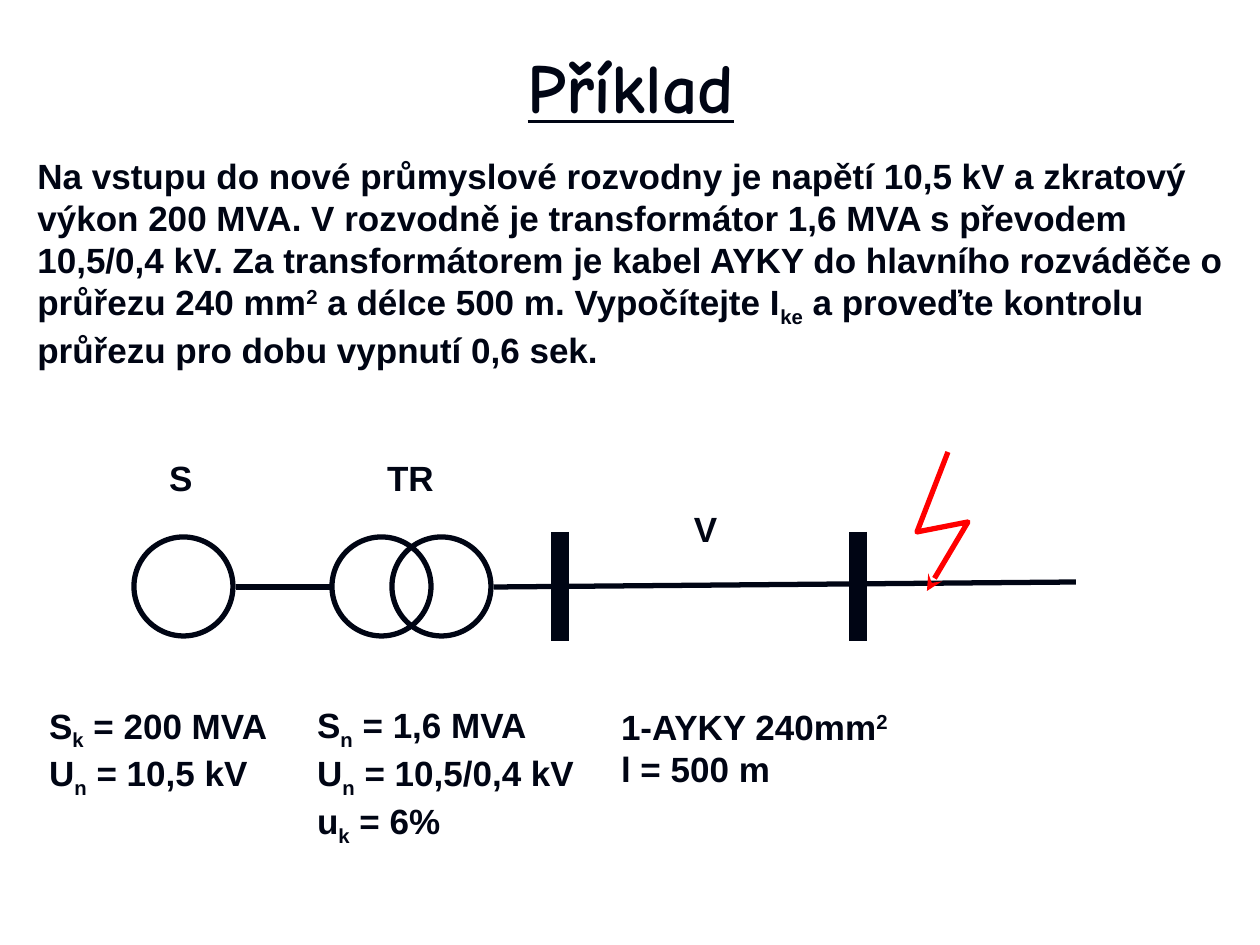
from dataclasses import dataclass

from lxml.etree import SubElement
from pptx import Presentation
from pptx.dml.color import RGBColor
from pptx.enum.shapes import MSO_CONNECTOR as Connector, MSO_SHAPE as Shape
from pptx.enum.text import MSO_ANCHOR as Anchor, MSO_AUTO_SIZE as AutoSize, PP_ALIGN as Align
from pptx.oxml.ns import qn
from pptx.util import Pt

SCALE = 914400 / 126


@dataclass(frozen=True)
class Theme:
    ink: RGBColor = RGBColor(0x00, 0x05, 0x14)
    fault: RGBColor = RGBColor(0xFF, 0x00, 0x00)
    body_font: str = "Arial"
    title_font: str = "Comic Neue"
    body_size: int = 20
    title_size: int = 40
    wire_width: int = 3
    busbar_width: int = 10


THEME = Theme()
SUPER, SUB = 30000, -25000

TITLE = "Příklad"
TASK = [[
    "Na vstupu do nové průmyslové rozvodny je napětí 10,5 kV a zkratový výkon 200 MVA. "
    "V rozvodně je transformátor 1,6 MVA s převodem 10,5/0,4 kV. Za transformátorem je "
    "kabel AYKY do hlavního rozváděče o průřezu 240 mm",
    ("2", SUPER),
    " a délce 500 m. Vypočítejte I",
    ("ke", SUB),
    " a proveďte kontrolu průřezu pro dobu vypnutí 0,6 sek.",
]]
SOURCE_DATA = [["S", ("k", SUB), " = 200 MVA"], ["U", ("n", SUB), " = 10,5 kV"]]
TRANSFORMER_DATA = [
    ["S", ("n", SUB), " = 1,6 MVA"],
    ["U", ("n", SUB), " = 10,5/0,4 kV"],
    ["u", ("k", SUB), " = 6%"],
]
CABLE_DATA = [["1-AYKY 240mm", ("2", SUPER)], ["l = 500 m"]]

NOTES = [
    (SOURCE_DATA, (44, 699, 248, 94), True),
    (CABLE_DATA, (616, 700, 281, 94), False),
    (TRANSFORMER_DATA, (312, 699, 271, 137), False),
    ([["TR"]], (382, 452, 57, 52), False),
    ([["V"]], (689, 503, 34, 52), False),
    ([["S"]], (164, 452, 34, 52), False),
]

CIRCLE_LEFTS, CIRCLE_TOP, CIRCLE_SIZE = (134, 392, 332), 537, 99
BUSBAR_CENTRES, BUSBAR_TOP, BUSBAR_BOTTOM = (858, 560), 532, 641
WIRES = [((236, 587), (330, 587)), ((494, 587), (1076, 582))]
LIGHTNING = [(948, 452), (917, 532), (968, 522), (927, 591)]


def px(*values):
    return [round(value * SCALE) for value in values]


def add_text(page, paragraphs, area, wrap=True, inset=5, font=THEME.body_font,
             size=THEME.body_size):
    box = page.shapes.add_textbox(*px(*area))
    frame = box.text_frame
    frame.word_wrap = wrap
    frame.auto_size = AutoSize.SHAPE_TO_FIT_TEXT
    if inset is not None:
        edge = px(inset)[0]
        frame.margin_left = frame.margin_right = edge
        frame.margin_top = frame.margin_bottom = edge
    for index, spans in enumerate(paragraphs):
        para = frame.add_paragraph() if index else frame.paragraphs[0]
        for item in spans:
            text, baseline = (item, 0) if isinstance(item, str) else item
            span = para.add_run()
            span.text = text
            span.font.name = font
            span.font.size = Pt(size)
            span.font.bold = True
            span.font.color.rgb = THEME.ink
            if baseline:
                span.font._element.set("baseline", str(baseline))
    return frame


def set_line(shape, color, width):
    shape.line.color.rgb = color
    shape.line.width = Pt(width)


def add_line(page, start, end, width):
    line = page.shapes.add_connector(Connector.STRAIGHT, *px(*start, *end))
    set_line(line, THEME.ink, width)
    SubElement(line._element.spPr, qn("a:effectLst"))


def add_circle(page, left):
    circle = page.shapes.add_shape(
        Shape.OVAL, *px(left, CIRCLE_TOP, CIRCLE_SIZE, CIRCLE_SIZE))
    circle.fill.background()
    circle.shadow.inherit = False
    set_line(circle, THEME.ink, THEME.wire_width)


def add_lightning(page):
    builder = page.shapes.build_freeform(*LIGHTNING[0], scale=SCALE)
    builder.add_line_segments(LIGHTNING[1:], close=False)
    bolt = builder.convert_to_shape()
    bolt.fill.background()
    bolt.shadow.inherit = False
    set_line(bolt, THEME.fault, THEME.wire_width)
    SubElement(bolt.line._get_or_add_ln(), qn("a:tailEnd"), type="stealth")


def main():
    deck = Presentation()
    deck.slide_width, deck.slide_height = px(1260, 945)
    page = deck.slides.add_slide(deck.slide_layouts[6])

    title = add_text(page, [[TITLE]], (64, 35, 1134, 100), inset=None,
                     font=THEME.title_font, size=THEME.title_size)
    title.auto_size = AutoSize.NONE
    title.vertical_anchor = Anchor.MIDDLE
    title.paragraphs[0].alignment = Align.CENTER
    title.paragraphs[0].runs[0].font.underline = True

    add_text(page, TASK, (25, 148, 1221, 223), inset=None)
    for paragraphs, area, wrap in NOTES:
        add_text(page, paragraphs, area, wrap)

    for left in CIRCLE_LEFTS:
        add_circle(page, left)
    for centre in BUSBAR_CENTRES:
        add_line(page, (centre, BUSBAR_TOP), (centre, BUSBAR_BOTTOM), THEME.busbar_width)
    for start, end in WIRES:
        add_line(page, start, end, THEME.wire_width)
    add_lightning(page)
    deck.save("out.pptx")


if __name__ == "__main__":
    main()
